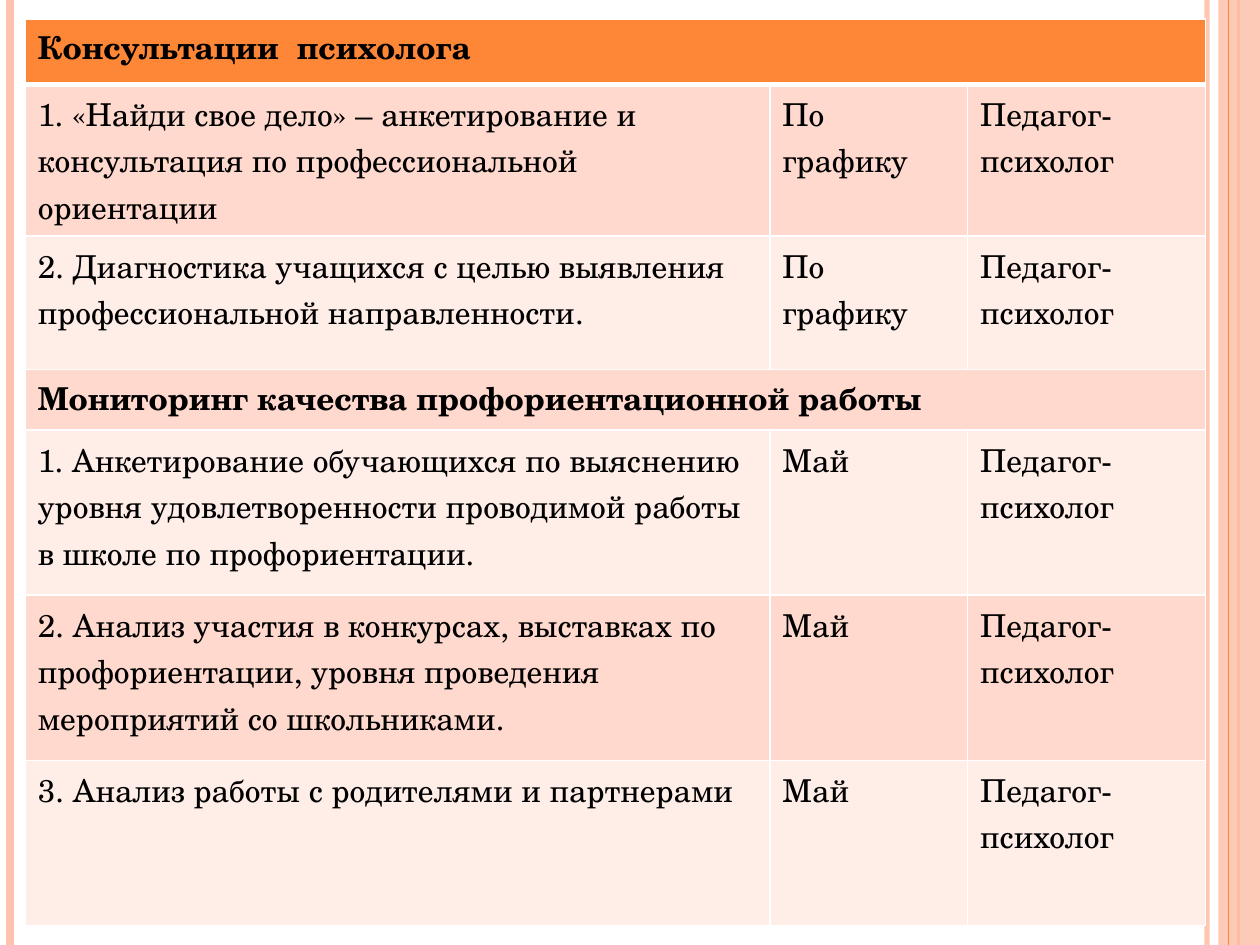
import pptx
import pptx.util
import pptx.dml.color
import pptx.enum.shapes
import pptx.oxml
import pptx.oxml.ns
import lxml.etree

RGBColor = pptx.dml.color.RGBColor
ORANGE = RGBColor(0xFE, 0x86, 0x37)
PEACH = RGBColor(0xFE, 0xC3, 0xAE)
BAND_DARK = RGBColor(0xFF, 0xD9, 0xCE)
BAND_LIGHT = RGBColor(0xFF, 0xED, 0xE8)
WHITE = RGBColor(0xFF, 0xFF, 0xFF)
BLACK = RGBColor(0, 0, 0)

WIDTH, HEIGHT = 10, 7.5
COLUMNS = [5.91, 1.57, 1.89]
PSYCHOLOGIST = "Педагог-психолог"
PLAN = [
    (0.52, ["Консультации  психолога"]),
    (1.2, ["1. «Найди свое дело» – анкетирование и консультация по "
           "профессиональной ориентации", "По графику", PSYCHOLOGIST]),
    (1.06, ["2. Диагностика учащихся с целью выявления профессиональной "
            "направленности.", "По графику", PSYCHOLOGIST]),
    (0.48, ["Мониторинг качества профориентационной работы"]),
    (1.31, ["1. Анкетирование обучающихся по выяснению уровня удовлетворенности "
            "проводимой работы в школе по профориентации.", "Май", PSYCHOLOGIST]),
    (1.31, ["2. Анализ участия в конкурсах, выставках по профориентации, уровня "
            "проведения мероприятий со школьниками.", "Май", PSYCHOLOGIST]),
    (1.31, ["3. Анализ работы с родителями и партнерами", "Май", PSYCHOLOGIST]),
]


class SlidePainter:
    text_format = {"name": "TeX Gyre Schola", "size": pptx.util.Pt(18)}
    line_spacing = pptx.util.Pt(26.5)

    def __init__(self, deck):
        self.deck = deck
        self.slide = deck.slides.add_slide(deck.slide_layouts[6])

    def across(self, share):
        return round(self.deck.slide_width * share)

    def down(self, share):
        return round(self.deck.slide_height * share)

    def fade(self, element, opacity):
        color = next(element.iter(pptx.oxml.ns.qn("a:srgbClr")))
        alpha = lxml.etree.SubElement(color, pptx.oxml.ns.qn("a:alpha"))
        alpha.set("val", str(opacity * 1000))

    def stripe(self, x, color, weight, opacity=100):
        stripe = self.slide.shapes.add_connector(
            pptx.enum.shapes.MSO_CONNECTOR.STRAIGHT,
            self.across(x), 0, self.across(x), self.down(1))
        stripe.line.color.rgb = color
        stripe.line.width = pptx.util.Pt(weight)
        properties = stripe._element.spPr
        lxml.etree.SubElement(properties, pptx.oxml.ns.qn("a:effectLst"))
        if opacity < 100:
            self.fade(properties, opacity)

    def panel(self, x, width, color, opacity):
        panel = self.slide.shapes.add_shape(
            pptx.enum.shapes.MSO_SHAPE.RECTANGLE,
            self.across(x), 0, self.across(width), self.down(1))
        panel.shadow.inherit = False
        panel.fill.solid()
        panel.fill.fore_color.rgb = color
        panel.line.fill.background()
        self.fade(panel._element.spPr, opacity)

    def borders(self, cell, weights):
        properties = cell._tc.get_or_add_tcPr()
        for side, weight in weights.items():
            properties.append(pptx.oxml.parse_xml(
                f'<a:ln{side} {pptx.oxml.ns.nsdecls("a")} w="{pptx.util.Pt(weight)}">'
                f'<a:solidFill><a:srgbClr val="{WHITE}"/></a:solidFill></a:ln{side}>'))

    def entry(self, cell, wording, bold):
        paragraph = cell.text_frame.paragraphs[0]
        paragraph.line_spacing = self.line_spacing
        run = paragraph.add_run()
        run.text = wording
        for attribute, value in {**self.text_format, "bold": bold}.items():
            setattr(run.font, attribute, value)
        run.font.color.rgb = BLACK

    def schedule(self, x, y, columns, plan):
        heights = [height for height, _ in plan]
        table = self.slide.shapes.add_table(
            len(plan), len(columns), self.across(x), self.down(y),
            self.across(sum(columns) / WIDTH), self.down(sum(heights) / HEIGHT)).table
        for column, width in zip(table.columns, columns):
            column.width = self.across(width / WIDTH)
        for index, (height, wordings) in enumerate(plan):
            table.rows[index].height = self.down(height / HEIGHT)
            band = BAND_DARK if index % 2 else BAND_LIGHT
            weights = {"L": 1, "R": 1, "T": 3 if index == 1 else 1,
                       "B": 3 if index == 0 else 1}
            for position in range(len(columns)):
                cell = table.cell(index, position)
                self.borders(cell, weights)
                cell.fill.solid()
                cell.fill.fore_color.rgb = band if index else ORANGE
            is_section = len(wordings) == 1
            if is_section:
                table.cell(index, 0).merge(table.cell(index, len(columns) - 1))
            for position, wording in enumerate(wordings):
                self.entry(table.cell(index, position), wording, is_section)


def main():
    deck = pptx.Presentation()
    deck.slide_width = pptx.util.Inches(WIDTH)
    deck.slide_height = pptx.util.Inches(HEIGHT)
    painter = SlidePainter(deck)
    painter.stripe(0.958, PEACH, 3, opacity=93)
    painter.stripe(0.008, PEACH, 4.5)
    painter.stripe(0.983, ORANGE, 1.5)
    painter.panel(0.967, 0.033, PEACH, opacity=87)
    painter.stripe(0.975, ORANGE, 0.75)
    painter.schedule(0.02, 0.02, COLUMNS, PLAN)
    deck.save("out.pptx")


if __name__ == "__main__":
    main()
